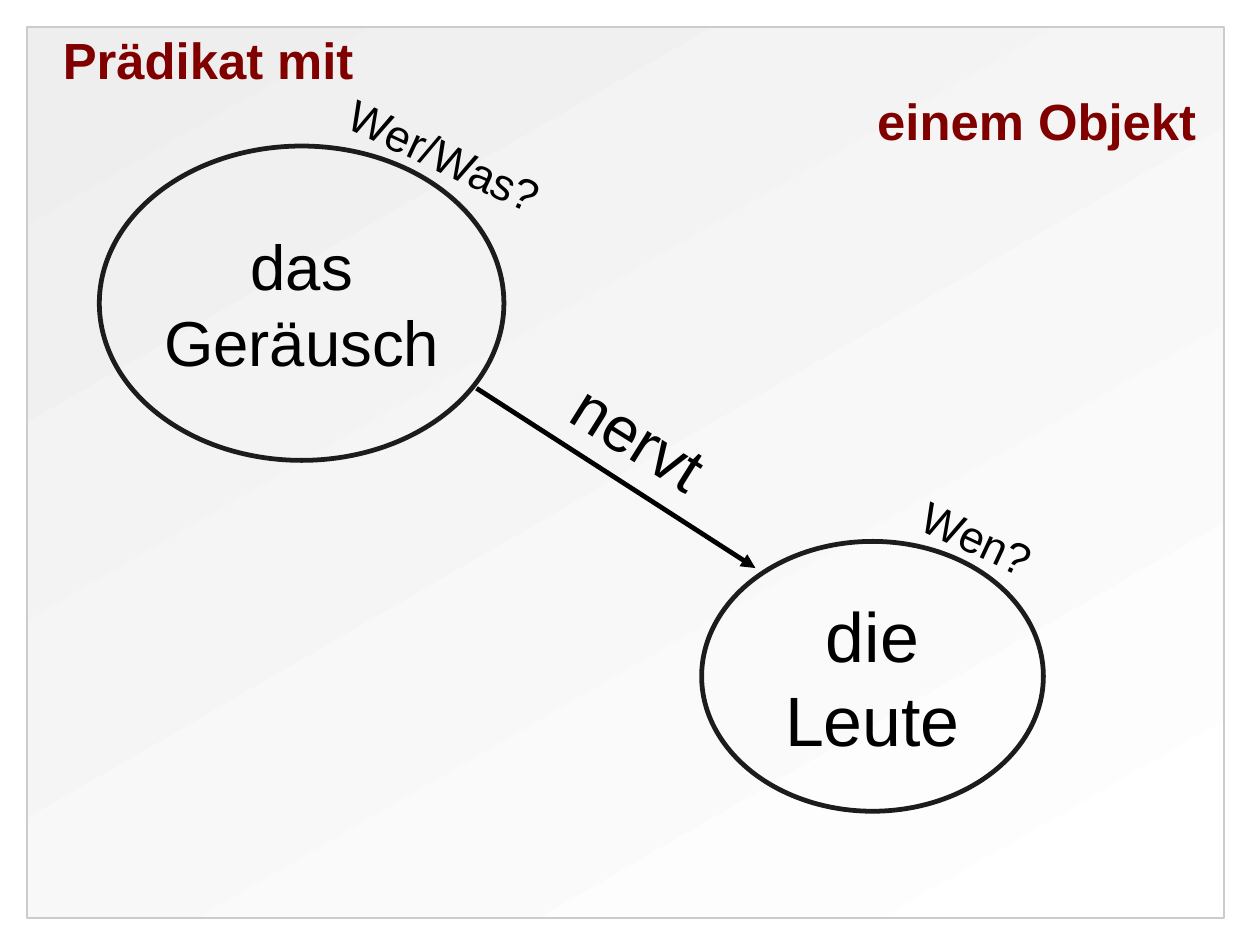
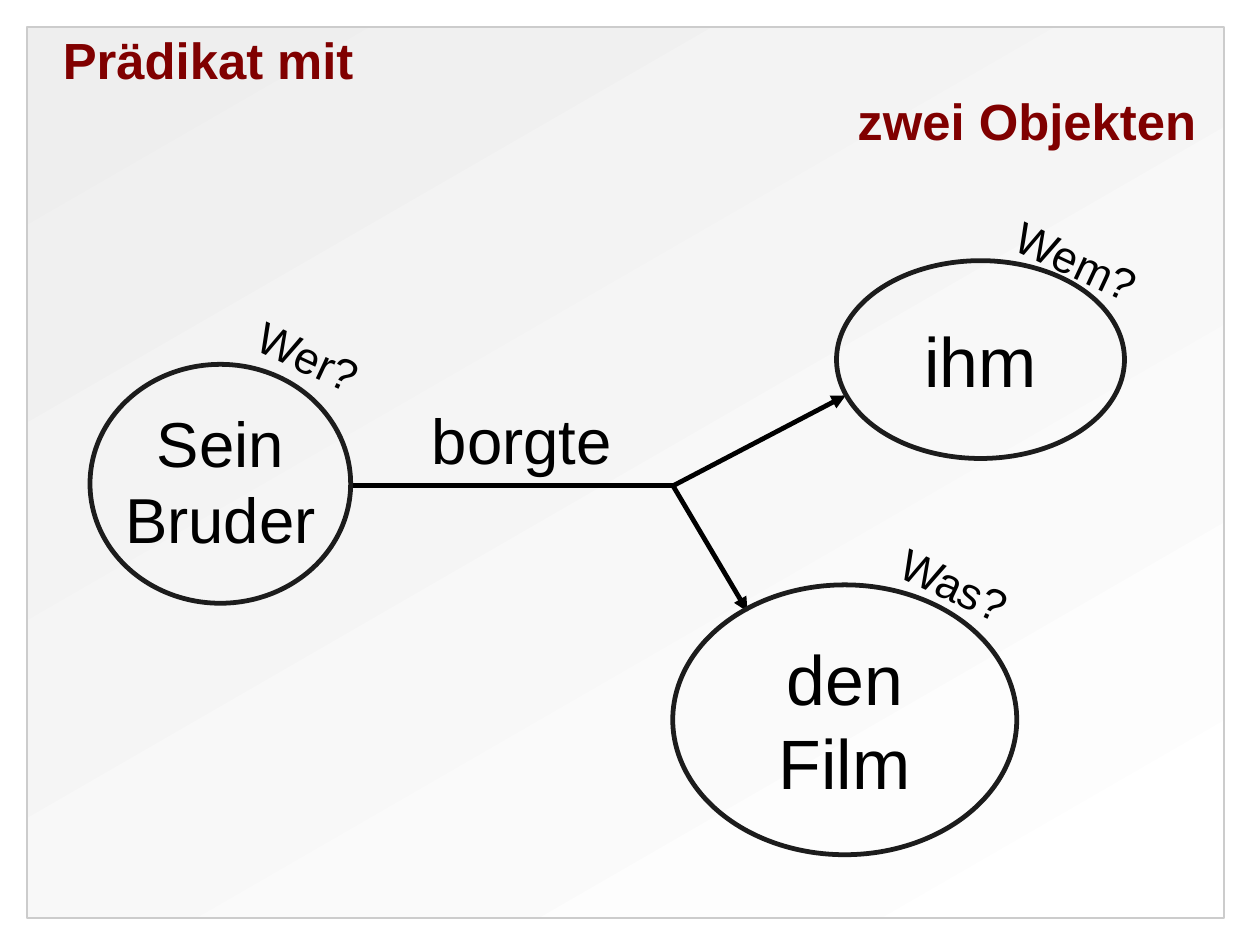
from dataclasses import dataclass

from lxml import etree
from pptx import Presentation
from pptx.dml.color import RGBColor
from pptx.enum.shapes import MSO_CONNECTOR, MSO_SHAPE
from pptx.enum.text import MSO_ANCHOR, MSO_AUTO_SIZE, PP_ALIGN
from pptx.oxml.ns import qn
from pptx.util import Pt

LEFT, CENTER, RIGHT = PP_ALIGN.LEFT, PP_ALIGN.CENTER, PP_ALIGN.RIGHT
TOP, MIDDLE = MSO_ANCHOR.TOP, MSO_ANCHOR.MIDDLE
FIT_SHAPE = MSO_AUTO_SIZE.SHAPE_TO_FIT_TEXT
OVAL, RECTANGLE = MSO_SHAPE.OVAL, MSO_SHAPE.RECTANGLE
STRAIGHT = MSO_CONNECTOR.STRAIGHT

FONT = "Arial"
BLACK, OUTLINE, TITLE_RED = "000000", "1C1C1C", "800000"
FRAME_LINE, FRAME_DARK, FRAME_LIGHT = "CCCCCC", "EEEEEE", "FFFFFF"
SLIDE_SIZE = (793.75, 595.25)
FRAME_BOX = (17, 17, 754, 561.3)
TITLE_BOX = (39.6, 20.5, 714.2, 72)
STROKE = 3
QUESTION_SIZE, QUESTION_TILT = 28, 25
VERB_SIZE = 40

Box = tuple[float, float, float, float]
Point = tuple[float, float]


@dataclass
class Actor:
    box: Box
    lines: list[str]
    size: int
    inset_top: float = 5


@dataclass
class Question:
    text: str
    box: Box


@dataclass
class Verb:
    text: str
    box: Box
    tilt: float = 0


@dataclass
class Link:
    start: Point
    end: Point
    arrow: bool = True


@dataclass
class Diagram:
    title: list[str]
    links: list[Link]
    actors: list[Actor]
    questions: list[Question]
    verb: Verb


FORK = (424, 306)
DIAGRAMS = [
    Diagram(
        ["Prädikat mit", "einem Objekt"],
        [Link((300.2, 244.6), (475.9, 357.8))],
        [
            Actor((62.6, 92, 254.9, 198), ["das", "Geräusch"], 40),
            Actor((442, 341, 215.3, 170), ["die", "Leute"], 44),
        ],
        [
            Question("Wer/Was?", (208.8, 77.5, 144, 40.3)),
            Question("Wen?", (572.4, 321, 99.4, 38.2)),
        ],
        Verb("nervt", (351.4, 247.7, 104.4, 55.4), 32.2),
    ),
    Diagram(
        ["Prädikat mit", "zwei Objekten"],
        [
            Link((222.5, 306), FORK, arrow=False),
            Link(FORK, (470.9, 385.2)),
            Link(FORK, (532.8, 249.1)),
        ],
        [
            Actor((56.7, 229.5, 164.2, 150.5), ["Sein", "Bruder"], 40, 0),
            Actor((527, 164.2, 181.4, 124.6), ["ihm"], 44),
            Actor((423.8, 368.4, 216.7, 170), ["den", "Film"], 44),
        ],
        [
            Question("Wer?", (153, 204.5, 85, 46)),
            Question("Wem?", (631.4, 144.7, 99.4, 38.2)),
            Question("Was?", (558.7, 350.6, 99.4, 38.2)),
        ],
        Verb("borgte", (265, 249.1, 128.9, 55.4)),
    ),
]


def rgb(value: str) -> RGBColor:
    """Turn a hex string into a colour."""
    return RGBColor.from_string(value)


def points(values: tuple[float, ...]) -> list[Pt]:
    """Turn numbers into lengths in points."""
    return [Pt(v) for v in values]


def set_line(s, color: str, width: float) -> None:
    """Give a shape or connector a solid line."""
    s.line.color.rgb = rgb(color)
    s.line.width = Pt(width)


def write(s, lines: list[str], size: float, aligns: list, color: str = BLACK,
          bold: bool = False, anchor=TOP, wrap: bool = True,
          insets: Box = (7.2, 3.6, 7.2, 3.6)) -> None:
    """Write one paragraph per line, each with its own alignment."""
    tf = s.text_frame
    tf.word_wrap = wrap
    tf.vertical_anchor = anchor
    tf.margin_left, tf.margin_top, tf.margin_right, tf.margin_bottom = points(insets)
    for i, (line, align) in enumerate(zip(lines, aligns)):
        p = tf.add_paragraph() if i else tf.paragraphs[0]
        p.text = line
        p.alignment = align
        p.font.name = FONT
        p.font.size = Pt(size)
        p.font.bold = bold
        p.font.color.rgb = rgb(color)


def add_frame(slide) -> None:
    """Draw the shared gradient panel."""
    s = slide.shapes.add_shape(RECTANGLE, *points(FRAME_BOX))
    s.shadow.inherit = False
    s.fill.gradient()
    s.fill.gradient_angle = 300
    for stop, color in zip(s.fill.gradient_stops, (FRAME_DARK, FRAME_LIGHT)):
        stop.color.rgb = rgb(color)
    set_line(s, FRAME_LINE, 1.5)


def add_title(slide, lines: list[str]) -> None:
    """Write the title with its first line left and its second right."""
    s = slide.shapes.add_textbox(*points(TITLE_BOX))
    write(s, lines, 32, [LEFT, RIGHT], TITLE_RED, True, MIDDLE, insets=(0, 0, 0, 0))


def add_link(slide, link: Link) -> None:
    """Draw a line, with an arrowhead where it reaches an actor."""
    s = slide.shapes.add_connector(STRAIGHT, *points(link.start + link.end))
    set_line(s, BLACK, STROKE)
    props = s.element.spPr
    if link.arrow:
        etree.SubElement(props.find(qn("a:ln")), qn("a:tailEnd"), type="triangle")
    etree.SubElement(props, qn("a:effectLst"))


def add_actor(slide, actor: Actor) -> None:
    """Draw an outlined ellipse with centred words."""
    s = slide.shapes.add_shape(OVAL, *points(actor.box))
    s.shadow.inherit = False
    s.fill.background()
    set_line(s, OUTLINE, STROKE)
    write(s, actor.lines, actor.size, [CENTER] * len(actor.lines), anchor=MIDDLE,
          wrap=False, insets=(8.6, actor.inset_top, 8.6, 5))


def add_question(slide, question: Question) -> None:
    """Write a tilted question beside an ellipse."""
    s = slide.shapes.add_textbox(*points(question.box))
    s.rotation = QUESTION_TILT
    write(s, [question.text], QUESTION_SIZE, [LEFT])


def add_verb(slide, verb: Verb) -> None:
    """Write the verb along its line."""
    s = slide.shapes.add_textbox(*points(verb.box))
    s.rotation = verb.tilt
    write(s, [verb.text], VERB_SIZE, [LEFT], wrap=False)
    s.text_frame.auto_size = FIT_SHAPE


def add_diagram(prs, diagram: Diagram) -> None:
    """Build one slide from its diagram."""
    slide = prs.slides.add_slide(prs.slide_layouts[6])
    add_frame(slide)
    add_title(slide, diagram.title)
    for link in diagram.links:
        add_link(slide, link)
    for actor in diagram.actors:
        add_actor(slide, actor)
    for question in diagram.questions:
        add_question(slide, question)
    add_verb(slide, diagram.verb)


def main() -> None:
    """Build and save the presentation."""
    prs = Presentation()
    prs.slide_width, prs.slide_height = points(SLIDE_SIZE)
    for diagram in DIAGRAMS:
        add_diagram(prs, diagram)
    prs.save("out.pptx")


if __name__ == "__main__":
    main()
